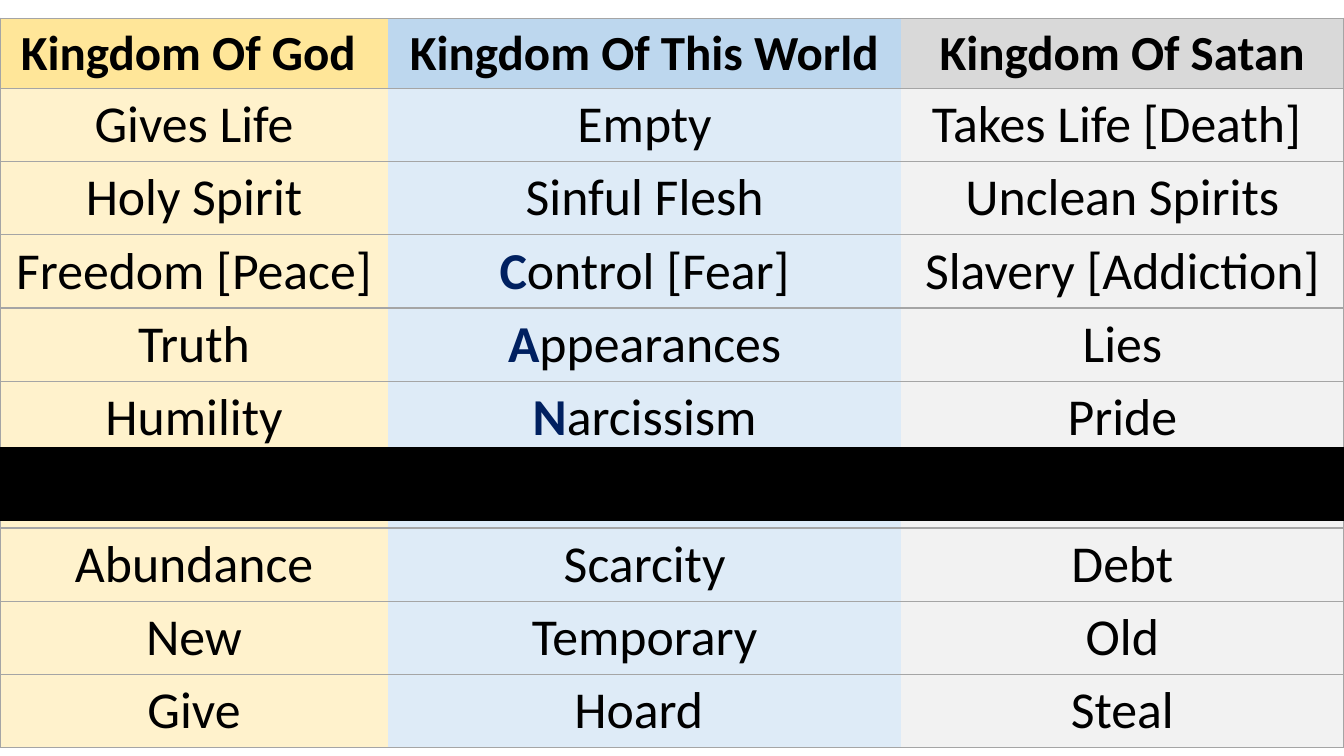
from lxml import etree
from pptx import Presentation
from pptx.dml.color import RGBColor
from pptx.enum.shapes import MSO_SHAPE
from pptx.enum.text import MSO_ANCHOR, PP_ALIGN
from pptx.oxml.ns import qn
from pptx.util import Cm, Pt

COLORS = {
    "text": "000000",
    "initial": "002060",
    "border": "A5A5A5",
    "bar": "000000",
}
HEADER_FILLS = ["FFE699", "BDD7EE", "D9D9D9"]
BODY_FILLS = ["FFF2CC", "DEEBF7", "F2F2F2"]
COLUMN_WIDTHS = [9.78, 12.93, 11.15]
HEADER_HEIGHT, ROW_HEIGHT = 1.73, 1.82
HEADER_FONT = {"name": "Calibri", "size": Pt(35), "bold": True}
BODY_FONT = {"name": "Calibri", "size": Pt(37), "bold": False}
ACROSTIC = ["Control [Fear]", "Appearances", "Narcissism"]
ROWS = [
    ["Kingdom Of God ", "Kingdom Of This World", "Kingdom Of Satan"],
    ["Gives Life", "Empty", "Takes Life [Death] "],
    ["Holy Spirit", "Sinful Flesh", "Unclean Spirits"],
    ["Freedom [Peace]", "Control [Fear]", "Slavery [Addiction]"],
    ["Truth", "Appearances", "Lies"],
    ["Humility", "Narcissism", "Pride"],
    ["Abundance", "Scarcity", "Debt"],
    ["Abundance", "Scarcity", "Debt"],
    ["New", "Temporary", "Old"],
    ["Give", "Hoard ", "Steal"],
]


def set_borders(cell, visible_sides):
    """Draw thin lines on the given sides and clear the others."""
    properties = cell._tc.get_or_add_tcPr()
    for side in "LRTB":
        line = etree.SubElement(properties, qn(f"a:ln{side}"), w=str(Pt(1)))
        if side in visible_sides:
            fill = etree.SubElement(line, qn("a:solidFill"))
            etree.SubElement(fill, qn("a:srgbClr"), val=COLORS["border"])
        else:
            etree.SubElement(line, qn("a:noFill"))


def add_run(paragraph, text, color, font_format):
    run = paragraph.add_run()
    run.text = text
    for name, value in font_format.items():
        setattr(run.font, name, value)
    run.font.color.rgb = RGBColor.from_string(COLORS[color])


presentation = Presentation()
presentation.slide_width = Cm(33.87)
presentation.slide_height = Cm(19.05)
slide = presentation.slides.add_slide(presentation.slide_layouts[6])

# Comparison table
table_height = HEADER_HEIGHT + ROW_HEIGHT * (len(ROWS) - 1)
table = slide.shapes.add_table(
    len(ROWS), len(COLUMN_WIDTHS), Cm(0), Cm(0.46), Cm(sum(COLUMN_WIDTHS)), Cm(table_height)
).table
table.first_row = False
table.horz_banding = False
for column, width in zip(table.columns, COLUMN_WIDTHS):
    column.width = Cm(width)

outer_sides = ["LTB", "TB", "RTB"]
for row_index, texts in enumerate(ROWS):
    is_header = row_index == 0
    table.rows[row_index].height = Cm(HEADER_HEIGHT if is_header else ROW_HEIGHT)
    fills = HEADER_FILLS if is_header else BODY_FILLS
    font_format = HEADER_FONT if is_header else BODY_FONT
    for column_index, text in enumerate(texts):
        cell = table.cell(row_index, column_index)
        set_borders(cell, outer_sides[column_index])
        cell.fill.solid()
        cell.fill.fore_color.rgb = RGBColor.from_string(fills[column_index])
        cell.vertical_anchor = MSO_ANCHOR.MIDDLE
        paragraph = cell.text_frame.paragraphs[0]
        paragraph.alignment = PP_ALIGN.CENTER
        if text in ACROSTIC:
            add_run(paragraph, text[0], "initial", font_format | {"bold": True})
            text = text[1:]
        add_run(paragraph, text, "text", font_format)

# Black bar across the table
bar = slide.shapes.add_shape(MSO_SHAPE.RECTANGLE, Cm(0), Cm(11.28), Cm(33.87), Cm(1.83))
bar.shadow.inherit = False
bar.fill.solid()
bar.fill.fore_color.rgb = RGBColor.from_string(COLORS["bar"])
bar.line.color.rgb = RGBColor.from_string(COLORS["bar"])
bar.line.width = Pt(1)

presentation.save("out.pptx")
